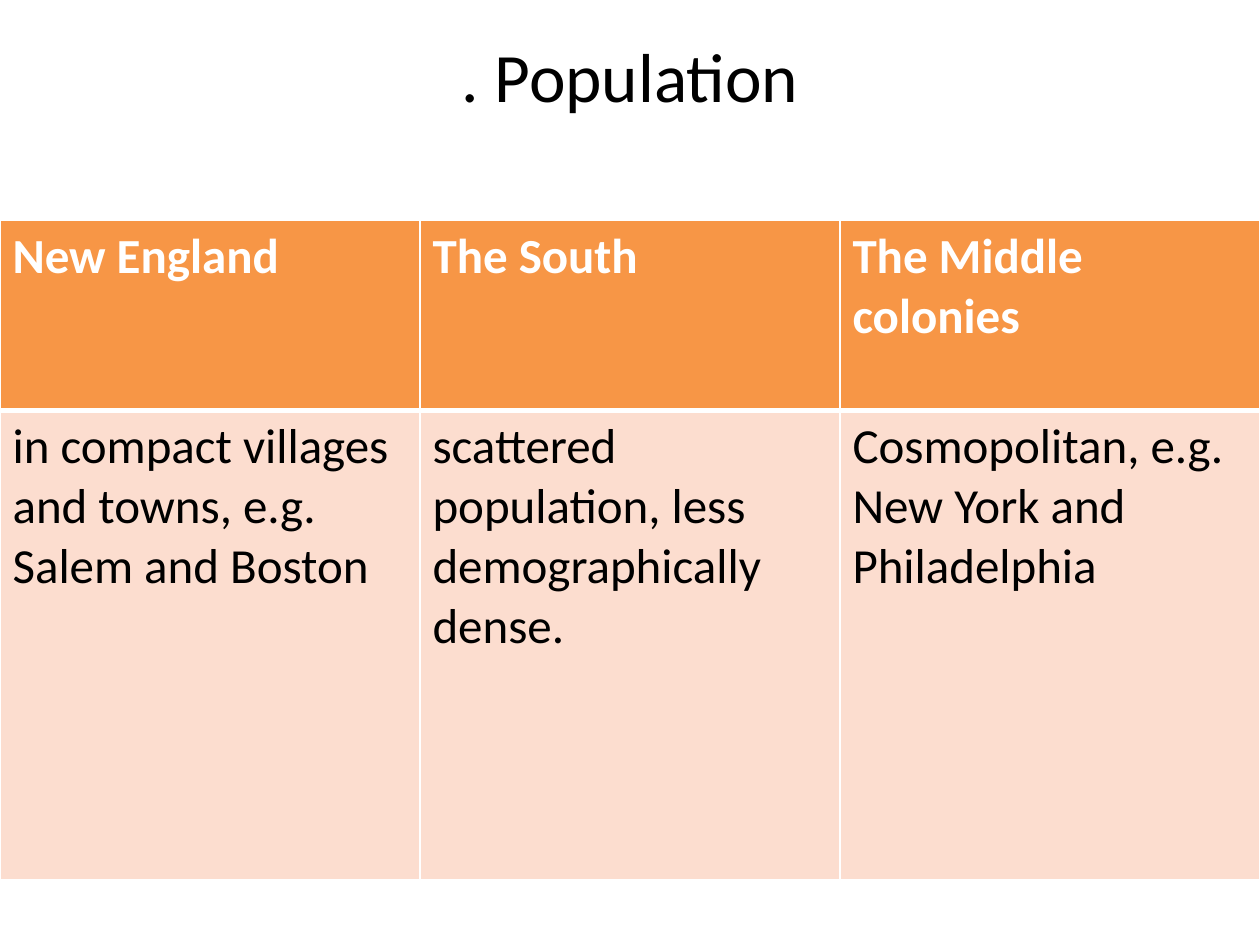
from dataclasses import dataclass
from lxml.etree import SubElement
from pptx import Presentation
from pptx.dml.color import RGBColor
from pptx.enum.text import MSO_ANCHOR, PP_ALIGN
from pptx.oxml.ns import qn
from pptx.util import Inches, Pt


@dataclass(frozen=True)
class Theme:
    """Colours, font and type sizes of the slide."""
    font: str = "Calibri"
    ink: str = "000000"
    paper: str = "FFFFFF"
    head: str = "F79646"
    body: str = "FCDDCF"
    title: float = 39.6
    text: float = 28
    thin: float = 1
    thick: float = 3


THEME = Theme()
ROWS = [
    ["New England", "The South", "The Middle colonies"],
    [
        "in compact villages and towns, e.g. Salem and Boston",
        "scattered population, less demographically dense.",
        "Cosmopolitan, e.g. New York and Philadelphia",
    ],
]


def style(font, size, color, bold=False):
    """Apply the theme font with the given size, colour and weight."""
    look = {"name": THEME.font, "size": Pt(size), "bold": bold}
    for key, value in look.items():
        setattr(font, key, value)
    font.color.rgb = RGBColor.from_string(color)


def edge(cell, sides):
    """Draw a cell's borders from a dict of side to width."""
    props = cell._tc.get_or_add_tcPr()
    for spot, (side, width) in enumerate(sides.items()):
        line = SubElement(props, qn(f"a:ln{side}"), w=str(Pt(width)))
        fill = SubElement(line, qn("a:solidFill"))
        SubElement(fill, qn("a:srgbClr"), val=THEME.paper)
        props.insert(spot, line)


def place(shape, box):
    """Move a shape into a box of left, top, width and height."""
    for key, value in zip(("left", "top", "width", "height"), box):
        setattr(shape, key, value)


def add_title(slide, box, text):
    """Fill the title placeholder, leaving an open line under the text."""
    title = slide.shapes.title
    place(title, box)
    frame = title.text_frame
    frame.vertical_anchor = MSO_ANCHOR.MIDDLE
    para = frame.paragraphs[0]
    para.alignment = PP_ALIGN.CENTER
    run = para.add_run()
    run.text = text
    style(run.font, THEME.title, THEME.ink)
    para.add_line_break()
    size = str(round(THEME.title * 100))
    SubElement(para._p.findall(qn("a:br"))[-1], qn("a:rPr"), sz=size)
    SubElement(para._p, qn("a:endParaRPr"), sz=size)


def add_grid(slide, box, rows, shares):
    """Add the table with a header row and row heights by share."""
    grid = slide.shapes.add_table(len(rows), len(rows[0]), *box).table
    grid.horz_banding = False
    for col in grid.columns:
        col.width = round(box[2] / len(rows[0]))
    for at, (texts, share) in enumerate(zip(rows, shares)):
        head = at == 0
        grid.rows[at].height = round(box[3] * share / sum(shares))
        sides = {
            "L": THEME.thin,
            "R": THEME.thin,
            "T": THEME.thick if at == 1 else THEME.thin,
            "B": THEME.thick if head else THEME.thin,
        }
        for cell, text in zip(grid.rows[at].cells, texts):
            cell.text = text
            cell.fill.solid()
            cell.fill.fore_color.rgb = RGBColor.from_string(
                THEME.head if head else THEME.body)
            edge(cell, sides)
            style(cell.text_frame.paragraphs[0].runs[0].font, THEME.text,
                  THEME.paper if head else THEME.ink, head)


def main():
    """Build the slide and save it."""
    deck = Presentation()
    deck.slide_width, deck.slide_height = Inches(10), Inches(7.5)
    wide, high = deck.slide_width, deck.slide_height
    slide = deck.slides.add_slide(deck.slide_layouts[5])
    add_title(slide, (round(wide * 0.05), round(high * 0.04),
                      round(wide * 0.9), round(high / 6)), ". Population")
    add_grid(slide, (0, Inches(1.75), wide, Inches(5.23)), ROWS, (1.51, 3.72))
    deck.save("out.pptx")


if __name__ == "__main__":
    main()
